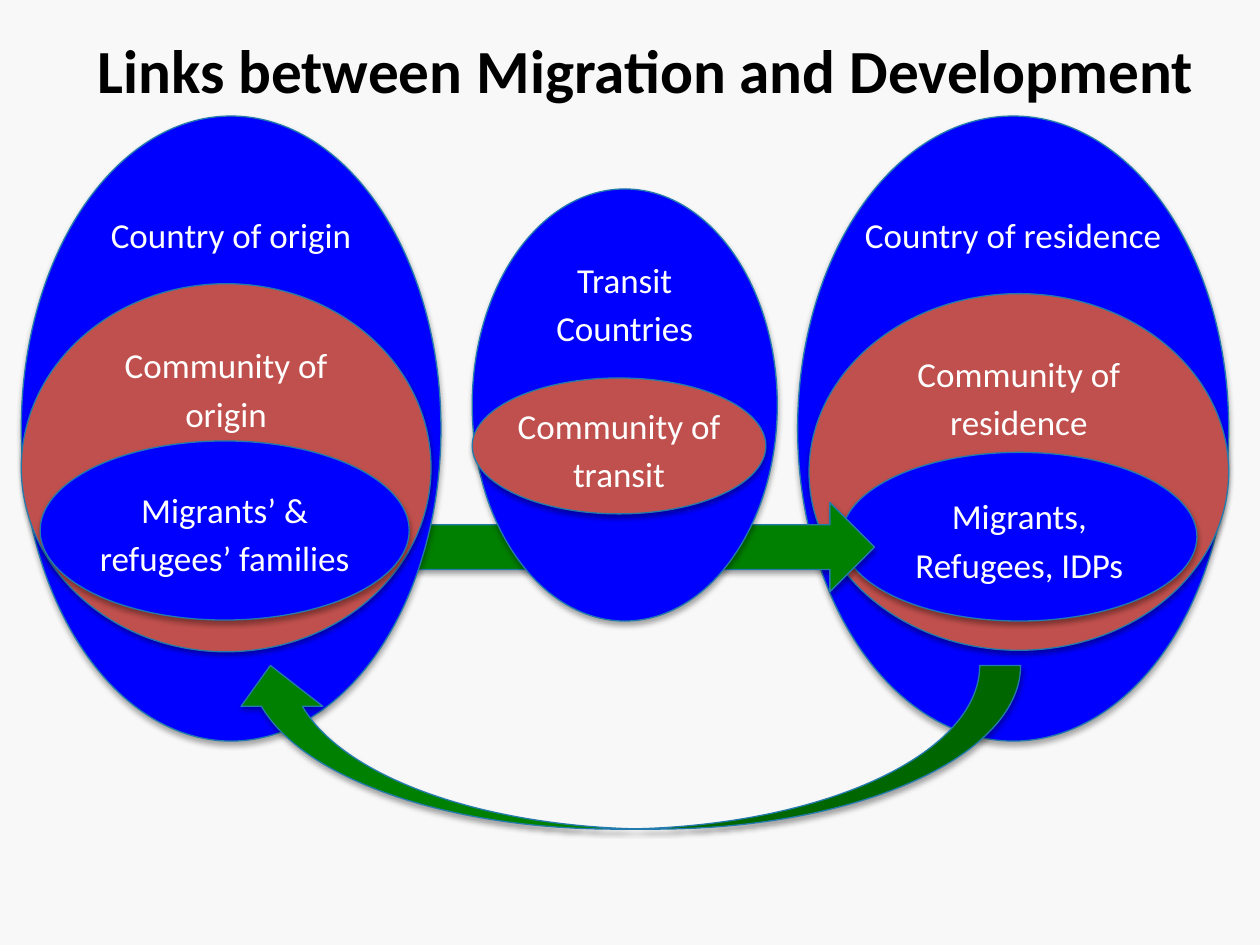
"""Build the slide on the links between migration and development."""
from lxml.etree import SubElement
from pptx import Presentation
from pptx.dml.color import RGBColor
from pptx.enum.shapes import MSO_SHAPE as Shape
from pptx.enum.text import MSO_ANCHOR as Anchor, PP_ALIGN as Align
from pptx.oxml.ns import qn
from pptx.util import Cm, Pt

COLOURS = {
    "background": "F8F8F8",
    "country": "0000FF",
    "community": "C0504D",
    "people": "0000FF",
    "flow": "008000",
    "outline": "237BAD",
    "label": "FFFFFF",
    "title": "000000",
    "shadow": "000000",
}


def colour(role):
    return RGBColor.from_string(COLOURS[role])


def write(frame, text, size=20, role="label", bold=False, anchor=Anchor.TOP,
          margin=0, spacing=1.15, after=10):
    frame.word_wrap = True
    frame.vertical_anchor = anchor
    frame.margin_left = frame.margin_right = Cm(margin)
    frame.margin_top = frame.margin_bottom = Cm(margin / 2)
    paragraph = frame.paragraphs[0]
    paragraph.alignment = Align.CENTER
    paragraph.line_spacing = spacing
    paragraph.space_after = Pt(after)
    run = paragraph.add_run()
    run.text = text
    run.font.name = "Calibri"
    run.font.size = Pt(size)
    run.font.bold = bold
    run.font.color.rgb = colour(role)


def cast_shadow(shape):
    shape.shadow.inherit = False
    effects = shape.element.spPr.find(qn("a:effectLst"))
    outer = SubElement(effects, qn("a:outerShdw"), blurRad=str(Pt(3.1)),
                       dist=str(Pt(1.8)), dir="5400000", rotWithShape="0")
    tint = SubElement(outer, qn("a:srgbClr"), val=COLOURS["shadow"])
    SubElement(tint, qn("a:alpha"), val="35000")


def add_figure(slide, kind, role, box):
    figure = slide.shapes.add_shape(kind, *map(Cm, box))
    figure.fill.solid()
    figure.fill.fore_color.rgb = colour(role)
    figure.line.color.rgb = colour("outline")
    figure.line.width = Pt(0.75)
    cast_shadow(figure)
    return figure


def add_circles(slide, *circles):
    for role, text, box in circles:
        circle = add_figure(slide, Shape.OVAL, role, box)
        if role == "people":
            write(circle.text_frame, text, anchor=Anchor.MIDDLE,
                  after=0 if "families" in text else 10)
        else:
            write(circle.text_frame, text)


def add_title(slide, text, box):
    title = slide.shapes.add_textbox(*map(Cm, box))
    write(title.text_frame, text, size=35, role="title", bold=True,
          anchor=Anchor.MIDDLE, margin=0.25, spacing=1, after=0)


def main():
    deck = Presentation()
    deck.slide_width, deck.slide_height = Cm(25.4), Cm(19.05)
    slide = deck.slides.add_slide(deck.slide_layouts[6])
    slide.background.fill.solid()
    slide.background.fill.fore_color.rgb = colour("background")

    add_circles(
        slide,
        ("country", "Country of residence", (16.08, 2.34, 8.69, 12.6)),
        ("community", "Community of residence", (16.31, 5.92, 8.46, 7.19)),
        ("people", "Migrants, Refugees, IDPs", (16.97, 9.12, 7.16, 3.4)),
    )
    add_figure(slide, Shape.RIGHT_ARROW, "flow", (7.14, 10.13, 10.49, 1.8))
    add_circles(
        slide,
        ("country", "Transit Countries", (9.52, 3.81, 6.15, 8.71)),
        ("community", "Community of transit", (9.52, 7.62, 5.92, 2.74)),
        ("country", "Country of origin", (0.43, 2.34, 8.46, 12.6)),
        ("community", "Community of origin", (0.43, 5.72, 8.26, 7.42)),
        ("people", "Migrants’ & refugees’ families", (0.81, 8.89, 7.44, 3.61)),
    )
    return_flow = add_figure(slide, Shape.CURVED_LEFT_ARROW, "flow",
                             (10.95, 7.09, 3.3, 15.95))
    return_flow.rotation = 90
    add_title(slide, "Links between Migration and Development",
              (1.27, 0.03, 23.5, 2.74))
    deck.save("out.pptx")


if __name__ == "__main__":
    main()
